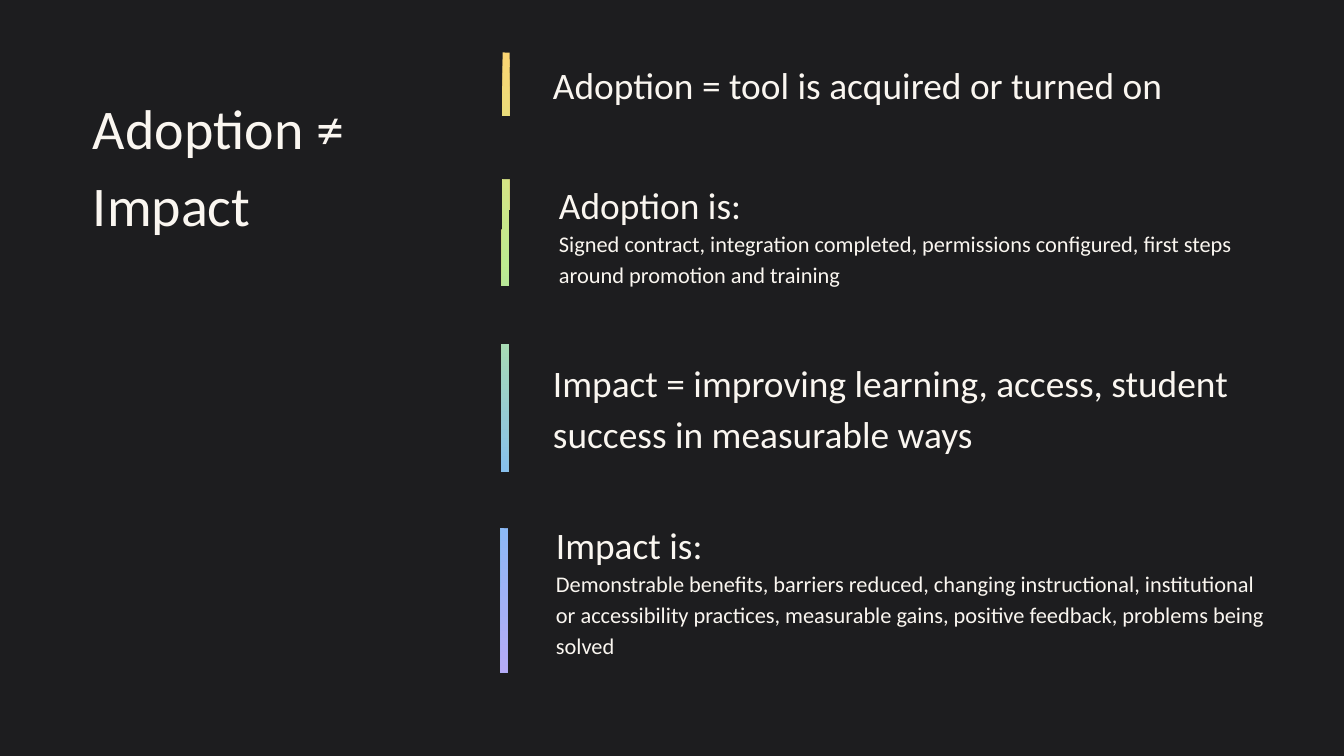
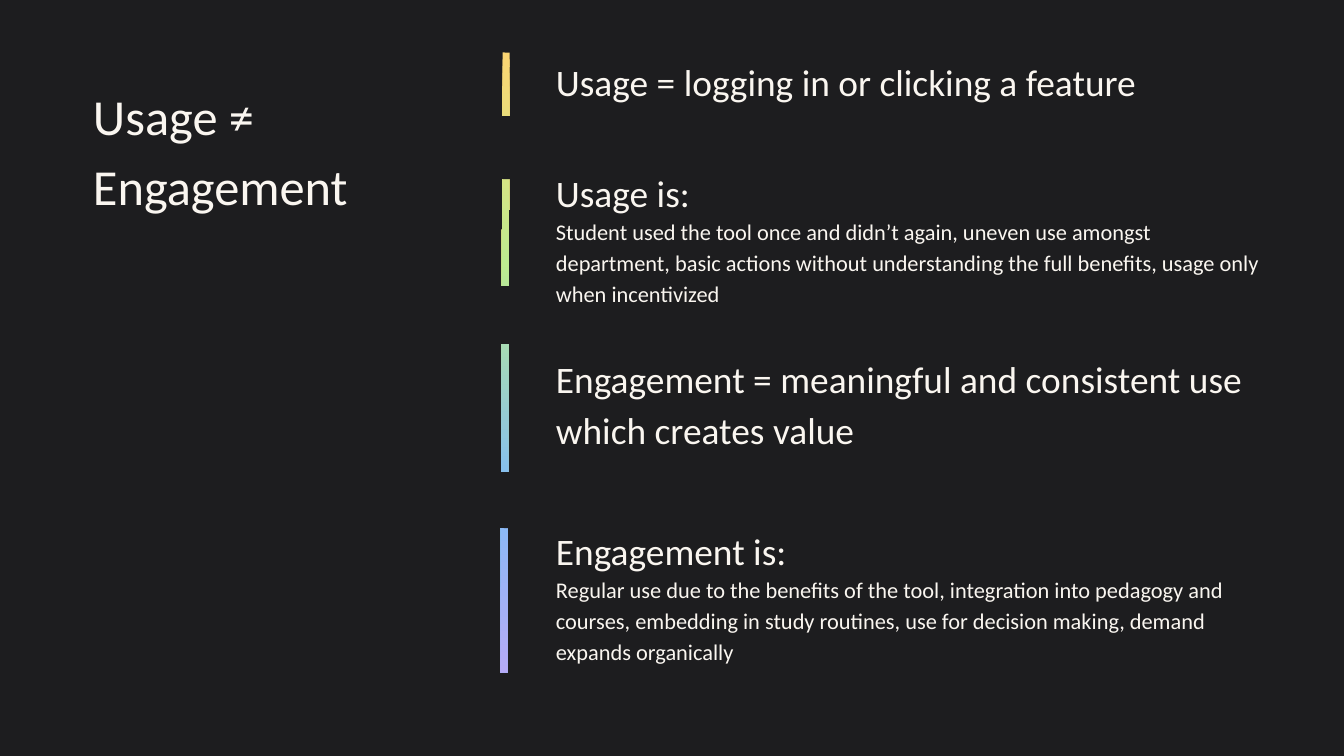
"""Builds two slides that contrast adoption with impact and usage with engagement."""
from copy import deepcopy

from pptx import Presentation
from pptx.dml.color import RGBColor
from pptx.enum.shapes import MSO_SHAPE as SHAPE
from pptx.enum.text import MSO_ANCHOR as ANCHOR, MSO_AUTO_SIZE as AUTO_SIZE, PP_ALIGN as ALIGN
from pptx.oxml.ns import qn
from pptx.util import Pt

PX = 914400 / 134.4
FONT = "Calibri"
DARK, CREAM = "1D1D1F", "FAF6F0"
RAINBOW = [(0, "FBD572"), (0.34, "BDEC90"), (0.71, "82BCF6"), (1, "B6ABF7")]
GAPS = [(458, 116, 63), (458, 286, 58), (460, 472, 56)]
HEADING, DETAIL = 20, 12

SLIDES = [
    ("Adoption ≠ Impact", 30, (78, 108, 356, 106), [
        (548, 55, 723, ["Adoption = tool is acquired or turned on"]),
        (554, 175, 728, ["Adoption is:",
                         "Signed contract, integration completed, permissions configured, "
                         "first steps around promotion and training"]),
        (548, 353, 728, ["Impact = improving learning, access, student success in measurable ways"]),
        (551, 515, 728, ["Impact is:",
                         "Demonstrable benefits, barriers reduced, changing instructional, "
                         "institutional or accessibility practices, measurable gains, "
                         "positive feedback, problems being solved"]),
    ]),
    ("Usage ≠ Engagement", 27, (78, 93, 383, 106), [
        (551, 52, 723, ["Usage = logging in or clicking a feature"]),
        (551, 163, 728, ["Usage is:",
                         "Student used the tool once and didn’t again, uneven use amongst "
                         "department, basic actions without understanding the full benefits, "
                         "usage only when incentivized"]),
        (551, 349, 728, ["Engagement = meaningful and consistent use which creates value"]),
        (551, 521, 728, ["Engagement is:",
                         "Regular use due to the benefits of the tool, integration into "
                         "pedagogy and courses, embedding in study routines, use for decision "
                         "making, demand expands organically"]),
    ]),
]


def px(*lengths):
    return [round(length * PX) for length in lengths]


def write(box, lines, sizes, insets, anchor):
    frame = box.text_frame
    frame.word_wrap = True
    frame.auto_size = AUTO_SIZE.NONE
    frame.vertical_anchor = anchor
    frame.margin_left, frame.margin_top, frame.margin_right, frame.margin_bottom = px(*insets)
    for index, (line, size) in enumerate(zip(lines, sizes)):
        para = frame.add_paragraph() if index else frame.paragraphs[0]
        para.alignment = ALIGN.LEFT
        para.line_spacing = 1.15
        para.space_before = para.space_after = Pt(0)
        properties = para._p.get_or_add_pPr()
        properties.set("marL", str(px(5)[0]))
        properties.set("indent", "0")
        span = para.add_run()
        span.text = line
        span.font.name = FONT
        span.font.size = Pt(size)
        span.font.color.rgb = RGBColor.from_string(CREAM)


deck = Presentation()
deck.slide_width, deck.slide_height = px(1344, 756)
background = deck.slide_master.background.fill
background.solid()
background.fore_color.rgb = RGBColor.from_string(DARK)

for heading, heading_size, heading_place, notions in SLIDES:
    page = deck.slides.add_slide(deck.slide_layouts[5])
    title = page.shapes.title
    title.left, title.top, title.width, title.height = px(*heading_place)
    write(title, [heading], [heading_size], (10, 5, 10, 5), ANCHOR.MIDDLE)

    for left, top, width, lines in notions:
        box = page.shapes.add_textbox(*px(left, top, width, 128))
        write(box, lines, [HEADING, DETAIL], (0, 0, 13, 0), ANCHOR.TOP)

    bar = page.shapes.add_shape(SHAPE.RECTANGLE, *px(195, 359, 620, 7))
    bar.fill.gradient()
    bar.fill.gradient_angle = 0
    stop_list = bar._element.spPr.find(".//" + qn("a:gsLst"))
    for stop in list(stop_list):
        stop_list.append(deepcopy(stop))
    for stop, (position, color) in zip(bar.fill.gradient_stops, RAINBOW):
        stop.position = position
        stop.color.rgb = RGBColor.from_string(color)
    bar.rotation = 270.2

    gaps = [page.shapes.add_shape(SHAPE.RECTANGLE, *px(left, top, 90, height))
            for left, top, height in GAPS]
    for gap in gaps:
        gap.fill.solid()
        gap.fill.fore_color.rgb = RGBColor.from_string(DARK)
        gap.rotation = 180.2

    for shape in [bar, *gaps]:
        shape.line.fill.background()
        shape.shadow.inherit = False
        shape._element.spPr.xfrm.set("flipH", "1")

deck.save("out.pptx")
